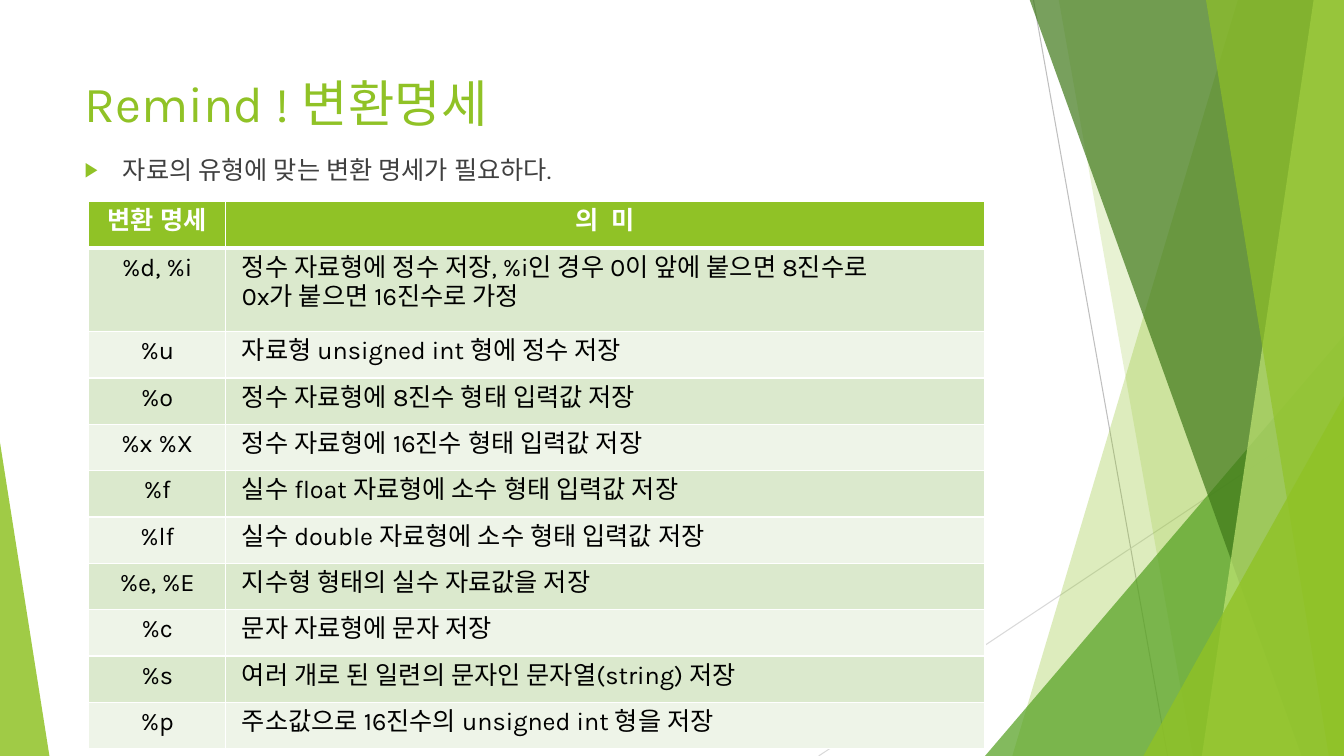
from dataclasses import dataclass

from lxml.etree import SubElement as SubEl
from pptx import Presentation
from pptx.dml.color import RGBColor as Rgb
from pptx.enum.shapes import MSO_CONNECTOR as Link, MSO_SHAPE as Shape
from pptx.enum.text import MSO_ANCHOR as Anchor, PP_ALIGN as Align
from pptx.oxml.ns import qn
from pptx.util import Inches, Pt

WIDE, HIGH, TOP = 13.33, 7.5, -0.01
FONT = "Karla"
HUES = {
    "lime": "90C226", "green": "54A021", "dark": "3F7819", "pale": "C0E474",
    "white": "FFFFFF", "black": "000000", "text": "404040",
    "grey": "BFBFBF", "mist": "D9D9D9", "band": "DBE9CD", "light": "EEF4E8",
}


@dataclass
class Ray:
    start: tuple[float, float]
    end: tuple[float, float]
    hue: str


@dataclass
class Shard:
    """Band from the top and bottom points to the right edge."""
    top: float
    foot: float
    hue: str
    alpha: int


@dataclass
class Wedge:
    """Triangle on the slide's foot; peak is 0 at left, 1 at right."""
    left: float
    top: float
    width: float
    peak: float
    hue: str
    alpha: int


RAYS = [
    Ray((10.25, 0), (11.58, HIGH), "grey"),
    Ray((WIDE, 4.03), (8.12, HIGH), "mist"),
]
PANES = [
    Shard(12.28, 10.04, "lime", 30),
    Shard(10.5, 11.83, "lime", 20),
    Wedge(9.77, 3.33, 3.56, 1, "green", 72),
    Shard(10.21, 12.91, "dark", 70),
    Shard(13.03, 11.92, "pale", 70),
    Shard(11.96, 13.18, "lime", 65),
    Wedge(11.34, 3.93, 1.99, 1, "lime", 80),
    Wedge(0, 4.39, 0.49, 0, "lime", 85),
]
ROWS = [
    ("변환 명세", "의  미"),
    ("%d, %i", " 정수 자료형에 정수 저장, %i인 경우 0이 앞에 붙으면 8진수로\n 0x가 붙으면 16진수로 가정"),
    ("%u", " 자료형 unsigned int 형에 정수 저장"),
    ("%o", " 정수 자료형에 8진수 형태 입력값 저장"),
    ("%x %X", " 정수 자료형에 16진수 형태 입력값 저장"),
    ("%f", " 실수 float 자료형에 소수 형태 입력값 저장"),
    ("%lf", " 실수 double 자료형에 소수 형태 입력값 저장"),
    ("%e, %E", " 지수형 형태의 실수 자료값을 저장"),
    ("%c", " 문자 자료형에 문자 저장"),
    ("%s", " 여러 개로 된 일련의 문자인 문자열(string) 저장"),
    ("%p", " 주소값으로 16진수의 unsigned int 형을 저장"),
]
# Row heights by number of text lines
TALL = {1: 0.46, 2: 0.83}


def tint(hue: str) -> Rgb:
    return Rgb.from_string(HUES[hue])


def place(shape, left: float, top: float, width: float, height: float) -> None:
    shape.left, shape.top = Inches(left), Inches(top)
    shape.width, shape.height = Inches(width), Inches(height)


def style(frame, size: int, hue: str, align: Align, bold: bool = False) -> None:
    for para in frame.paragraphs:
        para.alignment = align
        for run in para.runs:
            font = run.font
            font.name, font.size, font.bold = FONT, Pt(size), bold
            font.color.rgb = tint(hue)
            SubEl(run._r.get_or_add_rPr(), qn("a:ea"), typeface=FONT)


def draw_ray(slide, ray: Ray) -> None:
    ends = [Inches(n) for n in (*ray.start, *ray.end)]
    line = slide.shapes.add_connector(Link.STRAIGHT, *ends)
    line.line.color.rgb = tint(ray.hue)
    line.line.width = Pt(0.75)
    SubEl(line._element.spPr, qn("a:effectLst"))


def draw_pane(slide, pane: Shard | Wedge) -> None:
    if isinstance(pane, Shard):
        spots = [(pane.top, TOP), (WIDE, TOP), (WIDE, HIGH), (pane.foot, HIGH)]
        first, *rest = [(Inches(x), Inches(y)) for x, y in spots]
        form = slide.shapes.build_freeform(*first)
        form.add_line_segments(rest, close=True)
        shape = form.convert_to_shape()
    else:
        box = (pane.left, pane.top, pane.width, HIGH - pane.top)
        shape = slide.shapes.add_shape(
            Shape.ISOSCELES_TRIANGLE, *[Inches(n) for n in box])
        shape.adjustments[0] = pane.peak
    shape.shadow.inherit = False
    shape.line.fill.background()
    shape.fill.solid()
    shape.fill.fore_color.rgb = tint(pane.hue)
    color = shape._element.spPr.find(qn("a:solidFill"))[0]
    SubEl(color, qn("a:alpha"), val=str(pane.alpha * 1000))


def add_title(slide) -> None:
    title = slide.shapes.title
    place(title, 0.74, 0.67, 9.4, 1.44)
    frame = title.text_frame
    frame.text = "Remind ! 변환명세"
    frame.vertical_anchor = Anchor.TOP
    style(frame, 36, "lime", Align.LEFT)


def add_point(slide) -> None:
    box = slide.shapes.add_textbox(0, 0, 0, 0)
    place(box, 0.74, 1.48, 9.4, 5.13)
    frame = box.text_frame
    frame.word_wrap = True
    frame.text = "자료의 유형에 맞는 변환 명세가 필요하다."
    style(frame, 18, "text", Align.LEFT)
    para = frame.paragraphs[0]
    para.space_before = Pt(10)
    props = para._p.get_or_add_pPr()
    props.set("marL", str(Inches(0.38)))
    props.set("indent", str(Inches(-0.38)))
    SubEl(SubEl(props, qn("a:buClr")), qn("a:srgbClr"), val=HUES["lime"])
    SubEl(props, qn("a:buSzPct"), val="80000")
    SubEl(props, qn("a:buFont"), typeface="Arial")
    SubEl(props, qn("a:buChar"), char="▶")


def edge(cell, row: int) -> None:
    """White rules, with a thick one below the head row."""
    thick = {"T": row == 1, "B": row == 0}
    props = cell._tc.get_or_add_tcPr()
    for side in "LRTB":
        width = Pt(3 if thick.get(side) else 1)
        line = SubEl(props, qn(f"a:ln{side}"), w=str(width))
        fill = SubEl(line, qn("a:solidFill"))
        SubEl(fill, qn("a:srgbClr"), val=HUES["white"])


def add_grid(slide) -> None:
    tall = [TALL[1 + text.count("\n")] for _, text in ROWS]
    box = [Inches(n) for n in (0.88, 2, 8.89, sum(tall))]
    table = slide.shapes.add_table(len(ROWS), 2, *box).table
    table.horz_banding = False
    for col, width in zip(table.columns, (1.36, 7.53)):
        col.width = Inches(width)
    for r, texts in enumerate(ROWS):
        table.rows[r].height = Inches(tall[r])
        head = r == 0
        fill = "lime" if head else ("light", "band")[r % 2]
        for c, text in enumerate(texts):
            cell = table.cell(r, c)
            cell.text_frame.text = text
            edge(cell, r)
            cell.fill.solid()
            cell.fill.fore_color.rgb = tint(fill)
            align = Align.CENTER if head or c == 0 else Align.LEFT
            style(cell.text_frame, 18, "white" if head else "black", align, head)


def main() -> None:
    deck = Presentation()
    deck.slide_width, deck.slide_height = Inches(WIDE), Inches(HIGH)
    slide = deck.slides.add_slide(deck.slide_layouts[5])
    # Backdrop
    for ray in RAYS:
        draw_ray(slide, ray)
    for pane in PANES:
        draw_pane(slide, pane)
    # Content
    add_title(slide)
    add_point(slide)
    add_grid(slide)
    deck.save("out.pptx")


if __name__ == "__main__":
    main()
